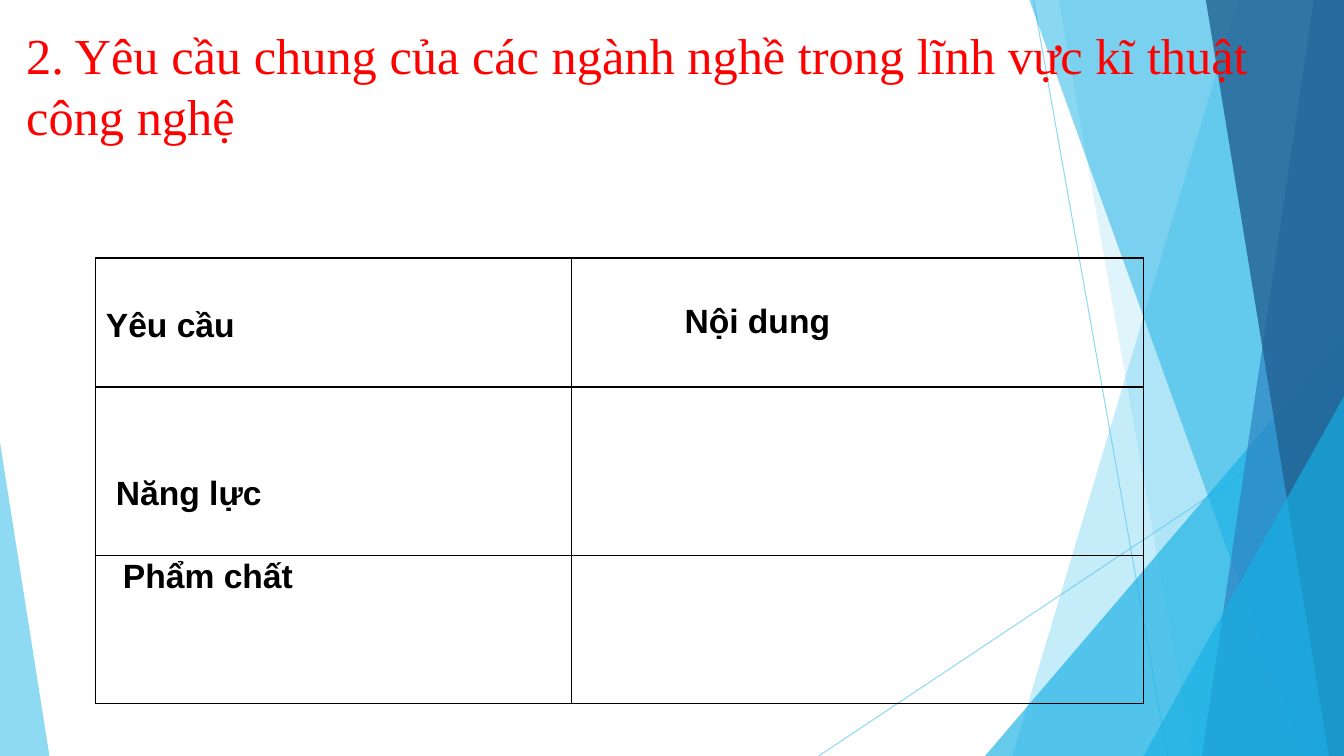
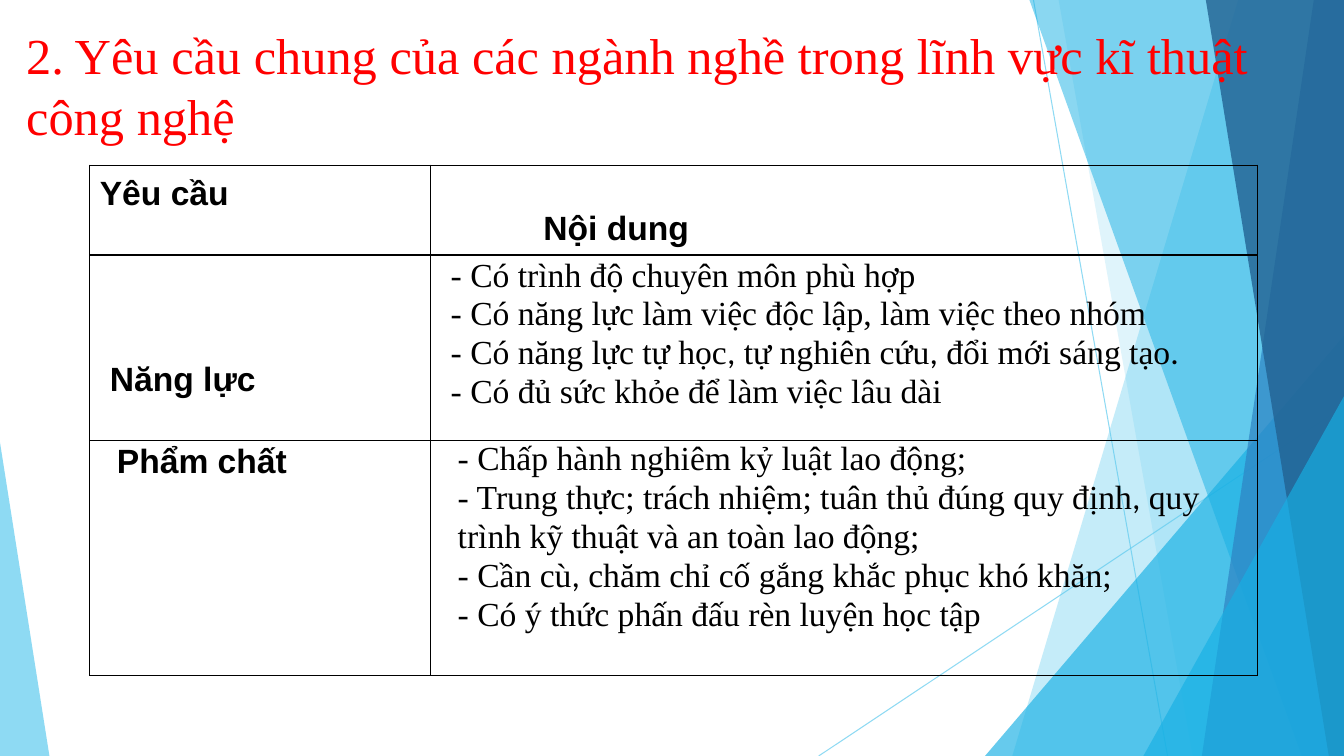
from dataclasses import dataclass

from lxml.etree import SubElement
from pptx import Presentation
from pptx.dml.color import RGBColor as Rgb
from pptx.enum.shapes import MSO_CONNECTOR as Connector, MSO_SHAPE as Shape
from pptx.enum.text import MSO_ANCHOR as Anchor, PP_ALIGN as Align
from pptx.oxml.ns import qn
from pptx.util import Inches, Pt


@dataclass(frozen=True)
class Theme:
    sky: str = "5FCBEF"
    cyan: str = "17B0E4"
    blue: str = "2E83C3"
    navy: str = "226292"
    red: str = "FF0000"
    black: str = "000000"
    serif: str = "Times New Roman"
    sans: str = "Arial"
    comma: str = "Calibri"
    title_size: int = 36
    table_size: int = 24


theme = Theme()
WIDTH, HEIGHT = 13.33, 7.5
TITLE = "2. Yêu cầu chung của các ngành nghề trong lĩnh vực kĩ thuật công nghệ"


def set_opacity(shape, percent):
    for colour in shape.element.iter(qn("a:srgbClr")):
        SubElement(colour, qn("a:alpha"), val=str(percent * 1000))


def style_span(span, face, size, colour, bold=False):
    span.font.name = face
    span.font.size = Pt(size)
    span.font.color.rgb = Rgb.from_string(colour)
    span.font.bold = bold


deck = Presentation()
deck.slide_width, deck.slide_height = Inches(WIDTH), Inches(HEIGHT)
layout = deck.slide_layouts[5]
pages = [deck.slides.add_slide(layout) for _ in range(2)]

backdrop = pages[0].shapes.add_group_shape()
rays = [(10.25, 0, 11.58, HEIGHT), (WIDTH, 4.03, 8.12, HEIGHT)]
for ends in rays:
    ray = backdrop.shapes.add_connector(Connector.STRAIGHT, *map(Inches, ends))
    ray.line.width = Pt(0.75)
    ray.line.color.rgb = Rgb.from_string(theme.sky)
    SubElement(ray.element.spPr, qn("a:effectLst"))
    set_opacity(ray, 70)

# A sheet gives its top-left and bottom-left x; a peak gives left, top, width, apex.
facets = [
    ((12.28, 10.04), theme.sky, 36),
    ((10.5, 11.83), theme.sky, 20),
    ((9.77, 3.33, 3.56, 1), theme.cyan, 66),
    ((10.21, 12.91), theme.cyan, 50),
    ((13.03, 11.92), theme.blue, 70),
    ((11.96, 13.18), theme.navy, 80),
    ((11.34, 3.93, 1.99, 1), theme.cyan, 66),
    ((0, 4.39, 0.49, 0), theme.sky, 70),
]
for outline, colour, opacity in facets:
    if len(outline) == 2:
        top_x, bottom_x = outline
        corners = [(WIDTH, 0), (WIDTH, HEIGHT), (bottom_x, HEIGHT)]
        builder = backdrop.shapes.build_freeform(Inches(top_x), 0)
        builder.add_line_segments([(Inches(x), Inches(y)) for x, y in corners])
        facet = builder.convert_to_shape()
    else:
        left, top, width, apex = outline
        facet = backdrop.shapes.add_shape(
            Shape.ISOSCELES_TRIANGLE,
            Inches(left), Inches(top), Inches(width), Inches(HEIGHT - top))
        facet.adjustments[0] = apex
    facet.shadow.inherit = False
    facet.fill.solid()
    facet.fill.fore_color.rgb = Rgb.from_string(colour)
    facet.line.fill.background()
    set_opacity(facet, opacity)

layout_tree = layout.element.cSld.spTree
layout_tree.insert(2, backdrop.element)
for number, node in enumerate(layout_tree.iter(qn("p:cNvPr")), 1):
    node.set("id", str(number))

labels = {
    (0, 0): ("Yêu cầu", 0.1, 0, 0.42, Anchor.BOTTOM),
    (0, 1): ("Nội dung", 1.12, 0.42, 0, Anchor.TOP),
    (1, 0): ("Năng lực", 0.2, 0, 0.42, Anchor.BOTTOM),
    (2, 0): ("Phẩm chất", 0.27, 0, 0, Anchor.TOP),
}
answers = {
    (1, 1): (0.2, 0.03, [
        ["- Có trình độ chuyên môn phù hợp"],
        ["- Có năng lực làm việc độc lập, làm việc theo nhóm"],
        ["- Có năng lực tự học", ",", " tự nghiên cứu", ",", " đổi mới sáng tạo", "."],
        ["- Có đủ sức khỏe để làm việc lâu dài"],
    ]),
    (2, 1): (0.27, 0, [
        ["- Chấp hành nghiêm kỷ luật lao động;"],
        ["- Trung thực; trách nhiệm; tuân thủ đúng quy định", ",",
         " quy trình kỹ thuật và an toàn lao động;"],
        ["- Cần cù", ",", " chăm chỉ cố gắng khắc phục khó khăn;"],
        ["- Có ý thức phấn đấu rèn luyện học tập"],
    ]),
}
tables = [
    (0.95, 2.56, [4.72, 5.67], [1.28, 1.67, 1.47], {}),
    (0.89, 1.64, [3.38, 8.2], [0.89, 1.84, 2.33], answers),
]

for page, (left, top, columns, rows, contents) in zip(pages, tables):
    title = page.shapes.title
    title.left, title.top = Inches(0.16), Inches(0.19)
    title.width, title.height = Inches(13.17), Inches(1.44)
    title.text_frame.text = TITLE
    title.text_frame.vertical_anchor = Anchor.TOP
    heading = title.text_frame.paragraphs[0]
    heading.alignment = Align.LEFT
    style_span(heading.runs[0], theme.serif, theme.title_size, theme.red)

    table = page.shapes.add_table(
        len(rows), len(columns), Inches(left), Inches(top),
        Inches(sum(columns)), Inches(sum(rows))).table
    table.first_row = table.horz_banding = False
    for column, width in zip(table.columns, columns):
        column.width = Inches(width)
    for row, height in zip(table.rows, rows):
        row.height = Inches(height)

    for row_index in range(len(rows)):
        for column_index in range(len(columns)):
            place = row_index, column_index
            cell = table.cell(*place)
            cell.margin_left = cell.margin_right = Inches(0.01)
            cell.margin_top = cell.margin_bottom = 0
            properties = cell._tc.get_or_add_tcPr()
            for side in ("a:lnL", "a:lnR", "a:lnT", "a:lnB"):
                border = SubElement(properties, qn(side), w=str(Pt(1)))
                ink = SubElement(border, qn("a:solidFill"))
                SubElement(ink, qn("a:srgbClr"), val=theme.black)
            cell.fill.background()

            if place in labels:
                text, indent, above, below, anchor = labels[place]
                cell.margin_left = Inches(indent)
                cell.margin_top, cell.margin_bottom = Inches(above), Inches(below)
                cell.vertical_anchor = anchor
                cell.text_frame.text = text
                para = cell.text_frame.paragraphs[0]
                para.line_spacing = 1.07
                style_span(para.runs[0], theme.sans, theme.table_size, theme.black, True)
            elif place in contents:
                indent, above, lines = contents[place]
                cell.margin_left, cell.margin_top = Inches(indent), Inches(above)
                frame = cell.text_frame
                for index, pieces in enumerate(lines):
                    para = frame.add_paragraph() if index else frame.paragraphs[0]
                    for piece in pieces:
                        span = para.add_run()
                        span.text = piece
                        face = theme.comma if piece in (",", ".") else theme.serif
                        style_span(span, face, theme.table_size, theme.black)

deck.save("out.pptx")
